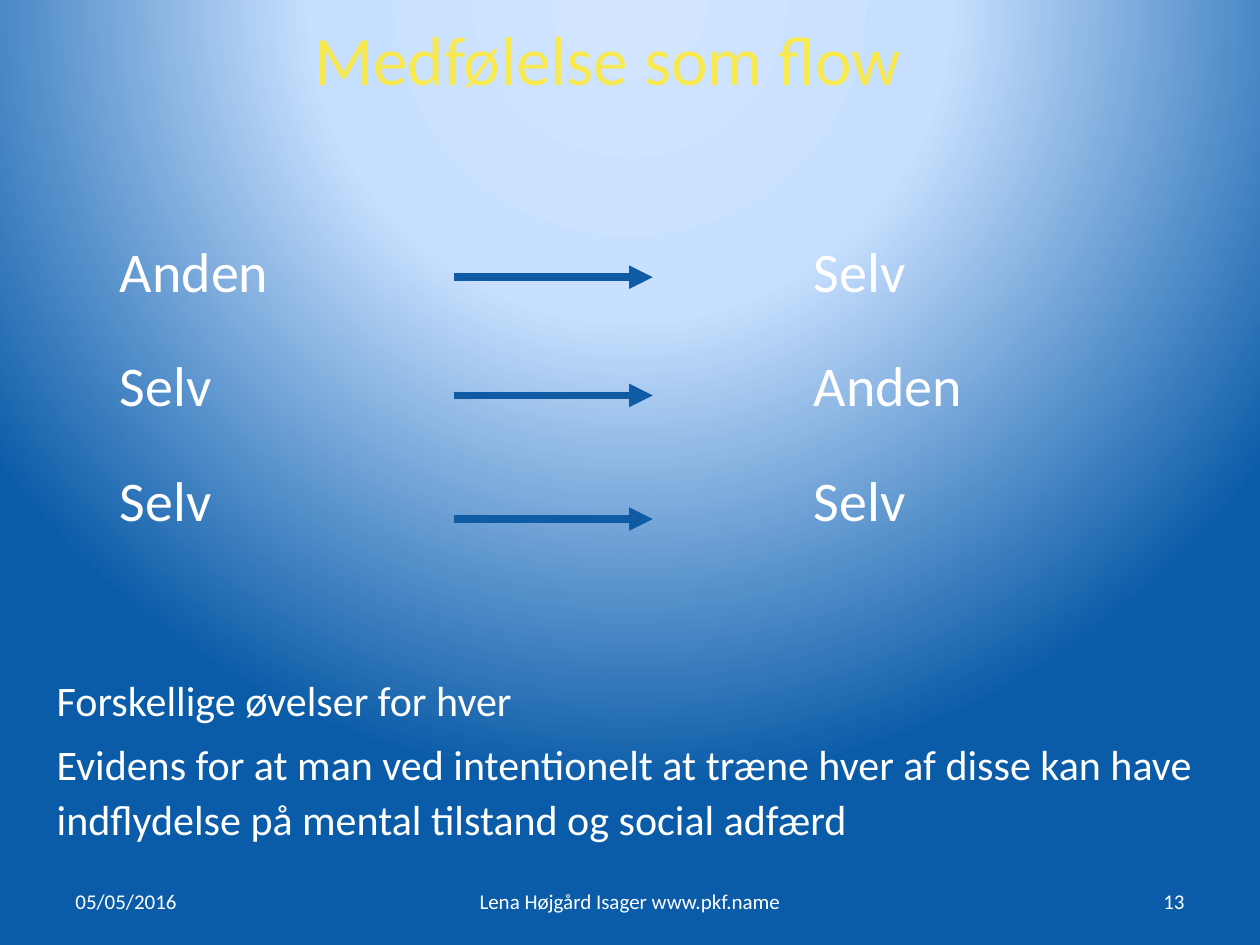
import pptx
import pptx.util
import pptx.dml.color
import pptx.enum.shapes
import pptx.enum.text
import pptx.oxml
import pptx.oxml.ns

Pt = pptx.util.Pt
ALIGN = pptx.enum.text.PP_ALIGN
ANCHOR = pptx.enum.text.MSO_ANCHOR
COLORS = {
    "glow": "D1E5FF",
    "pale": "C8E0FF",
    "deep": "0B5CA8",
    "arrow": "105CA4",
    "title": "F8E950",
    "text": "FFFFFF",
}


class Deck:
    font = "Calibri"

    def __init__(self, width, height):
        self.prs = pptx.Presentation()
        self.prs.slide_width = Pt(width)
        self.prs.slide_height = Pt(height)
        self.slide = self.prs.slides.add_slide(self.prs.slide_layouts[5])

    def place(self, shape, box):
        shape.left, shape.top, shape.width, shape.height = map(Pt, box)

    def backdrop(self, stops):
        fill = self.slide.background.fill
        fill.gradient()
        old = self.slide.element.find(".//" + pptx.oxml.ns.qn("a:gradFill"))
        marks = "".join(
            f'<a:gs pos="{pos * 1000}"><a:srgbClr val="{COLORS[name]}"/></a:gs>'
            for pos, name in stops
        )
        new = pptx.oxml.parse_xml(
            f'<a:gradFill {pptx.oxml.ns.nsdecls("a")} rotWithShape="1">'
            f'<a:gsLst>{marks}</a:gsLst><a:path path="circle">'
            '<a:fillToRect l="50000" t="-80000" r="50000" b="180000"/>'
            "</a:path></a:gradFill>"
        )
        old.getparent().replace(old, new)

    def add_run(self, par, text, size, color="text"):
        run = par.add_run()
        run.text = text
        run.font.size = Pt(size)
        run.font.name = self.font
        run.font.color.rgb = pptx.dml.color.RGBColor.from_string(COLORS[color])

    def setup(self, frame, anchor, inset):
        frame.word_wrap = True
        frame.auto_size = pptx.enum.text.MSO_AUTO_SIZE.NONE
        frame.vertical_anchor = anchor
        frame.margin_left = frame.margin_right = Pt(inset)
        frame.margin_top = frame.margin_bottom = Pt(0)

    def title(self, text, box, size):
        shape = self.slide.shapes.title
        self.place(shape, box)
        self.setup(shape.text_frame, ANCHOR.MIDDLE, 7.2)
        par = shape.text_frame.paragraphs[0]
        par.alignment = ALIGN.CENTER
        self.add_run(par, text, size, "title")

    def text(self, lines, box, size, align=ALIGN.LEFT, anchor=ANCHOR.TOP,
             inset=0, gap=0, spread=1.0, tab=None):
        frame = self.slide.shapes.add_textbox(*map(Pt, box)).text_frame
        self.setup(frame, anchor, inset)
        for i, line in enumerate(lines):
            par = frame.add_paragraph() if i else frame.paragraphs[0]
            par.alignment = align
            par.line_spacing = spread
            if i:
                par.space_before = Pt(gap)
            if tab:
                props = par._p.get_or_add_pPr()
                props.append(pptx.oxml.parse_xml(
                    f'<a:tabLst {pptx.oxml.ns.nsdecls("a")}>'
                    f'<a:tab pos="{Pt(tab)}" algn="l"/></a:tabLst>'
                ))
            self.add_run(par, line, size)

    def arrow(self, left, right, y):
        line = self.slide.shapes.add_connector(
            pptx.enum.shapes.MSO_CONNECTOR.STRAIGHT,
            Pt(left), Pt(y), Pt(right), Pt(y),
        )
        line.line.width = Pt(4.5)
        line.line.color.rgb = pptx.dml.color.RGBColor.from_string(COLORS["arrow"])
        space = pptx.oxml.ns.nsdecls("a")
        stroke = line.line._get_or_add_ln()
        stroke.append(pptx.oxml.parse_xml(f'<a:tailEnd {space} type="triangle"/>'))
        line._element.spPr.append(pptx.oxml.parse_xml(f"<a:effectLst {space}/>"))

    def save(self):
        self.prs.save("out.pptx")


def main():
    deck = Deck(720, 540)
    deck.backdrop([(0, "glow"), (40, "pale"), (100, "deep")])
    deck.title("Medfølelse som flow", (14.4, 15, 666, 36), 39.6)

    flows = [("Anden", "Selv"), ("Selv", "Anden"), ("Selv", "Selv")]
    deck.text(["\t".join(flow) for flow in flows], (68.5, 135, 580, 175), 32,
              gap=27, tab=396.5)
    for y in (158.4, 226, 296.6):
        deck.arrow(259.2, 373, y)

    deck.text(
        [
            "Forskellige øvelser for hver",
            "Evidens for at man ved intentionelt at træne hver af disse kan have "
            "indflydelse på mental tilstand og social adfærd",
        ],
        (32.4, 382.5, 660, 108), 24, gap=4.8, spread=1.1,
    )

    footer = [
        ("05/05/2016", 36, 168, ALIGN.LEFT),
        ("Lena Højgård Isager www.pkf.name", 246, 228, ALIGN.CENTER),
        ("13", 516, 168, ALIGN.RIGHT),
    ]
    for text, left, width, align in footer:
        deck.text([text], (left, 500.5, width, 28.75), 12, align,
                  ANCHOR.MIDDLE, 7.2)
    deck.save()


if __name__ == "__main__":
    main()
